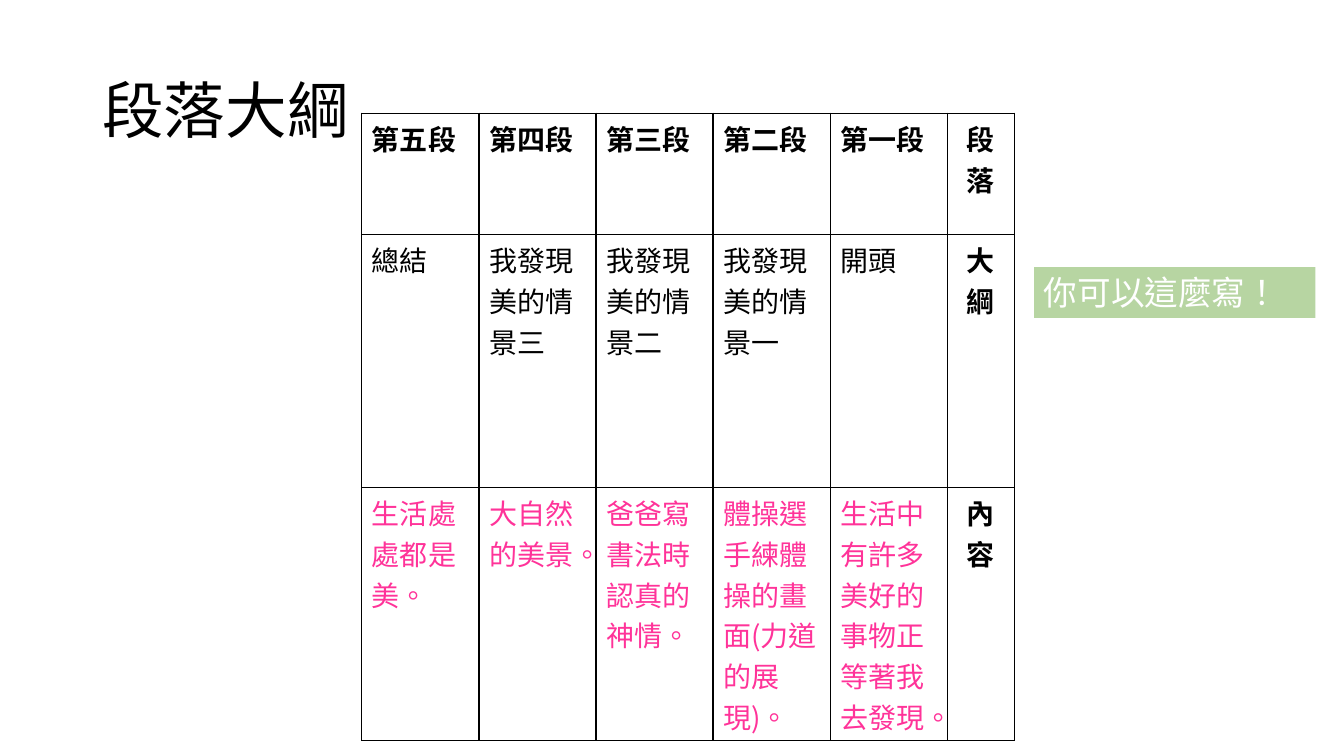
from lxml import etree
from pptx import Presentation
from pptx.dml.color import RGBColor
from pptx.enum.shapes import MSO_SHAPE
from pptx.enum.text import MSO_ANCHOR, MSO_AUTO_SIZE, PP_ALIGN
from pptx.oxml.ns import qn
from pptx.util import Cm, Pt

RECT = MSO_SHAPE.RECTANGLE
MIDDLE = MSO_ANCHOR.MIDDLE
GROW = MSO_AUTO_SIZE.SHAPE_TO_FIT_TEXT
LEFT, CENTER = PP_ALIGN.LEFT, PP_ALIGN.CENTER
CJK = "Noto Sans CJK SC"
COLORS = {"black": "000000", "pink": "FF3399", "green": "70AD47", "white": "FFFFFF"}


def add_run(p, text, size, color, font="Calibri", bold=False):
    r = p.add_run()
    r.text = text
    r.font.size = Pt(size)
    r.font.bold = bold
    r.font.name = font
    r.font.color.rgb = RGBColor.from_string(COLORS[color])
    rPr = r.font._element
    rPr.set("lang", "zh-TW")
    etree.SubElement(rPr, qn("a:ea")).set("typeface", CJK)


def add_borders(cell):
    tcPr = cell._tc.get_or_add_tcPr()
    for side in ("a:lnL", "a:lnR", "a:lnT", "a:lnB"):
        ln = etree.SubElement(tcPr, qn(side), w=str(Pt(1)))
        fill = etree.SubElement(ln, qn("a:solidFill"))
        etree.SubElement(fill, qn("a:srgbClr"), val=COLORS["black"])


prs = Presentation()
prs.slide_width, prs.slide_height = Cm(33.87), Cm(19.05)
s = prs.slides.add_slide(prs.slide_layouts[6])

# Title
sp = s.shapes.add_textbox(Cm(2.33), Cm(1.01), Cm(29.21), Cm(3.68))
tf = sp.text_frame
tf.word_wrap = True
tf.vertical_anchor = MIDDLE
p = tf.paragraphs[0]
p.line_spacing = 0.9
add_run(p, "段落大綱", 44, "black")

# Outline table, read from right to left
ROWS = [
    ["第五段", "第四段", "第三段", "第二段", "第一段", "段落"],
    ["總結", "我發現美的情景三", "我發現美的情景二", "我發現美的情景一", "開頭", "大綱"],
    ["生活處處都是美。", "大自然的美景。", "爸爸寫書法時認真的神情。",
     "體操選手練體操的畫面(力道的展現)。", "生活中有許多美好的事物正等著我去發現。", "內容"],
]
COL_WIDTHS = [2.95] * 5 + [1.7]
ROW_HEIGHTS = [3.05, 6.38, 6.38]
LABEL_COL = len(COL_WIDTHS) - 1

table = s.shapes.add_table(len(ROWS), len(COL_WIDTHS), Cm(9.12), Cm(2.85),
                           Cm(sum(COL_WIDTHS)), Cm(sum(ROW_HEIGHTS))).table
table.first_row = table.horz_banding = False
for column, width in zip(table.columns, COL_WIDTHS):
    column.width = Cm(width)
for row, height in zip(table.rows, ROW_HEIGHTS):
    row.height = Cm(height)

for i, texts in enumerate(ROWS):
    for j, text in enumerate(texts):
        cell = table.cell(i, j)
        is_label = j == LABEL_COL
        add_borders(cell)
        cell.fill.background()
        cell._tc.tcPr.set("vert", "eaVert")
        p = cell.text_frame.paragraphs[0]
        p.alignment = CENTER if is_label else LEFT
        color = "pink" if i == 2 and not is_label else "black"
        add_run(p, text, 20, color, CJK, bold=is_label or i == 0)

# Hint label with a half-transparent fill
sp = s.shapes.add_shape(RECT, Cm(26.06), Cm(6.73), Cm(7.09), Cm(1.28))
sp.shadow.inherit = False
sp.fill.solid()
sp.fill.fore_color.rgb = RGBColor.from_string(COLORS["green"])
green = sp._element.spPr.find(qn("a:solidFill")).find(qn("a:srgbClr"))
etree.SubElement(green, qn("a:alpha"), val="50000")
sp.line.fill.background()
tf = sp.text_frame
tf.word_wrap = True
tf.auto_size = GROW
p = tf.paragraphs[0]
p.alignment = LEFT
add_run(p, "你可以這麼寫！", 24, "white")

prs.save("out.pptx")
